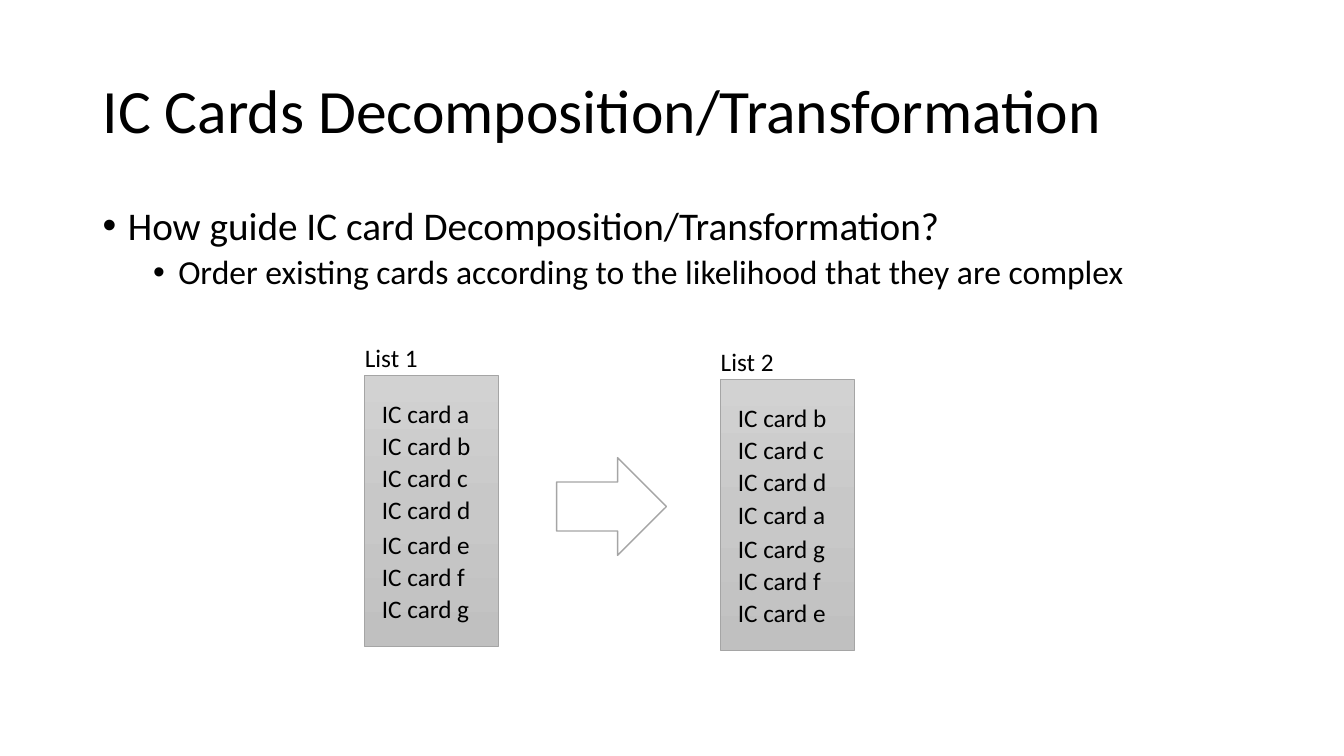
"""Build a slide showing a list of IC cards reordered by likely complexity."""
import copy
import pptx
import pptx.chart.data
import pptx.dml.color
import pptx.enum.shapes
import pptx.enum.text
import pptx.oxml
import pptx.oxml.ns
import pptx.util

Inches = pptx.util.Inches
Pt = pptx.util.Pt
qn = pptx.oxml.ns.qn
kinds = pptx.enum.shapes.MSO_SHAPE
hues = {"ink": "000000", "paper": "FFFFFF", "edge": "A5A5A5",
        "top": "D2D2D2", "mid": "C8C8C8", "low": "C0C0C0"}
rgb = {name: pptx.dml.color.RGBColor.from_string(code) for name, code in hues.items()}

deck = pptx.Presentation()
deck.slide_width, deck.slide_height = Inches(13.33), Inches(7.5)
slide = deck.slides.add_slide(deck.slide_layouts[6])


def write(lines, size, left, top, width, height, wrap=True):
    box = slide.shapes.add_textbox(*map(Inches, (left, top, width, height)))
    frame = box.text_frame
    frame.text = "\n".join(lines)
    frame.word_wrap = wrap
    for para in frame.paragraphs:
        para.font.size = Pt(size)
        para.font.name = "Calibri"
        para.font.color.rgb = rgb["ink"]
    return frame


def draw(kind, left, top, width, height, weight):
    shape = slide.shapes.add_shape(kind, *map(Inches, (left, top, width, height)))
    shape.shadow.inherit = False
    shape.line.color.rgb = rgb["edge"]
    shape.line.width = Pt(weight)
    return shape


title = write(["IC Cards Decomposition/Transformation"], 44, 0.92, 0.4, 11.5, 1.45)
title.vertical_anchor = pptx.enum.text.MSO_ANCHOR.MIDDLE
title.paragraphs[0].line_spacing = 0.9

body = write(["How guide IC card Decomposition/Transformation?",
              "Order existing cards according to the likelihood that they are complex"],
             28, 0.92, 2, 11.5, 5.1)
for level, (para, size, gap) in enumerate(zip(body.paragraphs, (28, 24), (10, 5))):
    para.level = level
    para.font.size = Pt(size)
    para.line_spacing = 0.9
    para.space_before = Pt(gap)
    props = para._p.get_or_add_pPr()
    props.set("marL", str(Inches(0.25 + 0.5 * level)))
    props.set("indent", str(Inches(-0.25)))
    tags = [pptx.oxml.parse_xml(f'<a:{tag} {pptx.oxml.ns.nsdecls("a")}/>')
            for tag in ("buFont", "buChar")]
    tags[0].set("typeface", "Arial")
    tags[1].set("char", "•")
    spot = props.index(props.find(qn("a:defRPr")))
    props[spot:spot] = tags

lists = [("List 1", "abcdefg", 3.61, 3.72), ("List 2", "bcdagfe", 7.14, 3.76)]
for label, cards, left, top in lists:
    panel = draw(kinds.RECTANGLE, left, top, 1.33, 2.69, 0.5)
    panel.fill.gradient()
    panel.fill.gradient_angle = 270
    stops = panel._element.spPr.find(".//" + qn("a:gsLst"))
    stops.insert(1, copy.deepcopy(stops[0]))
    for stop, place, hue in zip(panel.fill.gradient_stops, (0, 0.5, 1), ("top", "mid", "low")):
        stop.position = place
        stop.color.rgb = rgb[hue]
    write([label], 18, left - 0.09, top - 0.37, 1.25, 0.4)
    for row, card in enumerate(cards):
        write([f"IC card {card}"], 18, left + 0.08, top + 0.18 + 0.32 * row + row // 4 * 0.02,
              1.64, 0.4)

arrow = draw(kinds.RIGHT_ARROW, 5.52, 4.54, 1.09, 0.97, 1)
arrow.fill.solid()
arrow.fill.fore_color.rgb = rgb["paper"]

deck.save("out.pptx")
